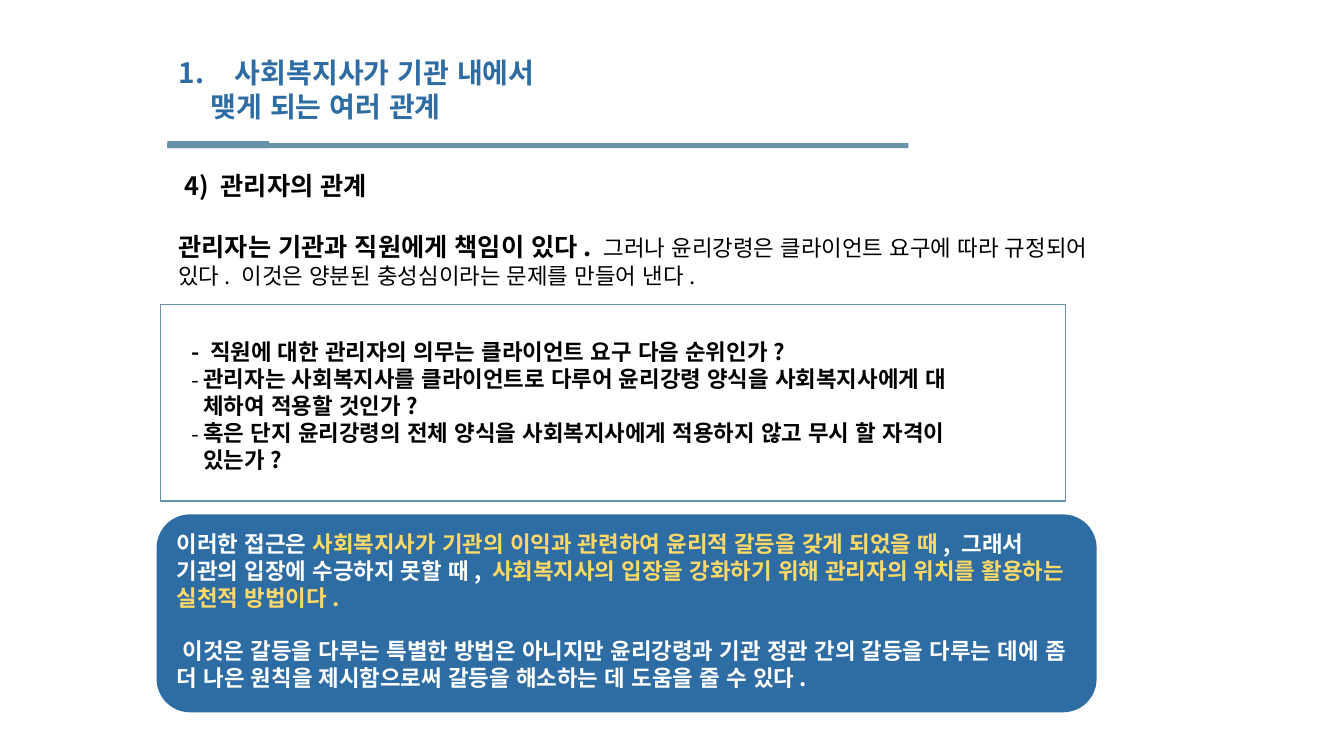
from dataclasses import dataclass

from lxml.etree import SubElement
from pptx import Presentation
from pptx.dml.color import RGBColor
from pptx.enum.lang import MSO_LANGUAGE_ID as LANGUAGE
from pptx.enum.shapes import MSO_SHAPE as SHAPE
from pptx.enum.text import MSO_ANCHOR as ANCHOR, MSO_AUTO_SIZE as AUTO_SIZE, PP_ALIGN as ALIGN
from pptx.oxml.ns import qn
from pptx.util import Inches, Pt


@dataclass(frozen=True)
class Theme:
    font: str = "Noto Sans CJK KR"
    blue: str = "2E6CA4"
    teal: str = "6793A9"
    yellow: str = "FFD966"
    white: str = "FFFFFF"
    black: str = "000000"
    title: int = 20
    heading: int = 18
    text: int = 16


THEME = Theme()


def rgb(color):
    return RGBColor.from_string(color)


def add_run(p, text, size=THEME.text, color=THEME.black, bold=True):
    """Add a Korean run in the theme font, with pair kerning off."""
    r = p.add_run()
    r.text = text
    r.font.size = Pt(size)
    r.font.bold = bold
    r.font.name = THEME.font
    r.font.language_id = LANGUAGE.KOREAN
    r.font.color.rgb = rgb(color)
    rPr = r.font._element
    rPr.set("kern", "0")
    SubElement(rPr, qn("a:ea"), typeface=THEME.font)


def add_paragraph(tf, *pieces, margin=0, indent=0, before=0, bullet=None, number=None, **style):
    """Add a paragraph of strings, or (string, overrides) pairs; a newline is a line break."""
    p = tf.paragraphs[0]
    if p.runs:
        p = tf.add_paragraph()
    p.alignment = ALIGN.LEFT
    p.space_before, p.space_after = Pt(before), Pt(0)
    pPr = p._p.get_or_add_pPr()
    pPr.set("marL", str(Inches(margin)))
    pPr.set("indent", str(Inches(indent)))
    if bullet or number:
        SubElement(pPr, qn("a:buFont"), typeface=THEME.font)
    if bullet:
        SubElement(pPr, qn("a:buChar"), char=bullet)
    elif number:
        SubElement(pPr, qn("a:buAutoNum"), type=number)
    else:
        SubElement(pPr, qn("a:buNone"))
    for piece in pieces:
        text, overrides = (piece, {}) if isinstance(piece, str) else piece
        for i, line in enumerate(text.split("\n")):
            if i:
                p.add_line_break()
            add_run(p, line, **{**style, **overrides})


def set_frame(sp, anchor=ANCHOR.TOP):
    tf = sp.text_frame
    tf.word_wrap = True
    tf.auto_size = AUTO_SIZE.NONE
    tf.vertical_anchor = anchor
    return tf


def place(sp, left, top, width, height):
    sp.left, sp.top = Inches(left), Inches(top)
    sp.width, sp.height = Inches(width), Inches(height)
    return set_frame(sp)


def add_box(slide, kind, left, top, width, height, line=None, fill=None):
    sp = slide.shapes.add_shape(kind, Inches(left), Inches(top), Inches(width), Inches(height))
    sp.shadow.inherit = False
    if fill:
        sp.fill.solid()
        sp.fill.fore_color.rgb = rgb(fill)
    else:
        sp.fill.background()
    if line:
        sp.line.color.rgb = rgb(line)
        sp.line.width = Pt(1)
    else:
        sp.line.fill.background()
    return sp


def add_title(slide):
    tf = place(slide.shapes.title, 1.67, 0.5, 4.03, 0.77)
    style = dict(size=THEME.title, color=THEME.blue)
    add_paragraph(tf, "사회복지사가 기관 내에서", margin=0.56, indent=-0.56,
                  number="arabicPeriod", **style)
    add_paragraph(tf, "맺게 되는 여러 관계", margin=0.32, **style)


def add_title_rule(slide):
    """Draw the rule under the title, with a slightly thicker start."""
    for top, width, height in ((1.42, 7.35, 0.05), (1.4, 1.01, 0.07)):
        add_box(slide, SHAPE.RECTANGLE, 1.66, top, width, height, fill=THEME.teal)


def add_body(slide):
    tf = place(slide.placeholders[1], 1.67, 1.64, 9.22, 1.41)
    add_paragraph(tf, "4) 관리자의 관계", indent=0.06, size=THEME.heading)
    add_paragraph(
        tf,
        ("관리자는 기관과 직원에게 책임이 있다. ", dict(size=THEME.heading)),
        ("그러나 윤리강령은 클라이언트 요구에 따라 규정되어 있다. "
         "이것은 양분된 충성심이라는 문제를 만들어 낸다.", dict(bold=False)),
        before=22)


def add_questions(slide):
    add_box(slide, SHAPE.RECTANGLE, 1.59, 3.02, 8.98, 1.95, line=THEME.teal)
    sp = slide.shapes.add_textbox(Inches(1.8), Inches(3.31), Inches(8.57), Inches(1.45))
    tf = set_frame(sp)
    add_paragraph(tf, "- 직원에 대한 관리자의 의무는 클라이언트 요구 다음 순위인가?")
    for question in (
        "관리자는 사회복지사를 클라이언트로 다루어 윤리강령 양식을 사회복지사에게 대\n체하여 적용할 것인가?",
        "혹은 단지 윤리강령의 전체 양식을 사회복지사에게 적용하지 않고 무시 할 자격이\n있는가?",
    ):
        add_paragraph(tf, question, margin=0.12, indent=-0.12, bullet="-")


def add_conclusion(slide):
    sp = add_box(slide, SHAPE.ROUNDED_RECTANGLE, 1.56, 5.11, 9.31, 1.95,
                 line=THEME.blue, fill=THEME.blue)
    tf = set_frame(sp, ANCHOR.MIDDLE)
    tf.margin_bottom = Inches(0.1)
    tf.margin_right = Inches(0.15)
    yellow = dict(color=THEME.yellow)
    add_paragraph(
        tf,
        "이러한 접근은 ",
        ("사회복지사가 기관의 이익과 관련하여 윤리적 갈등을 갖게 되었을 때", yellow),
        ", 그래서 기관의 입장에 수긍하지 못할 때, ",
        ("사회복지사의 입장을 강화하기 위해 관리자의 위치를 활용하는 실천적 방법이다.", yellow),
        color=THEME.white)
    add_paragraph(
        tf,
        "이것은 갈등을 다루는 특별한 방법은 아니지만 윤리강령과 기관 정관 간의 갈등을 다루는 데에 좀 "
        "더 나은 원칙을 제시함으로써 갈등을 해소하는 데 도움을 줄 수 있다.",
        indent=0.06, before=19, color=THEME.white)


def main():
    prs = Presentation()
    prs.slide_width, prs.slide_height = Inches(13.33), Inches(7.5)
    slide = prs.slides.add_slide(prs.slide_layouts[1])
    add_title(slide)
    add_title_rule(slide)
    add_body(slide)
    add_questions(slide)
    add_conclusion(slide)
    prs.save("out.pptx")


if __name__ == "__main__":
    main()
